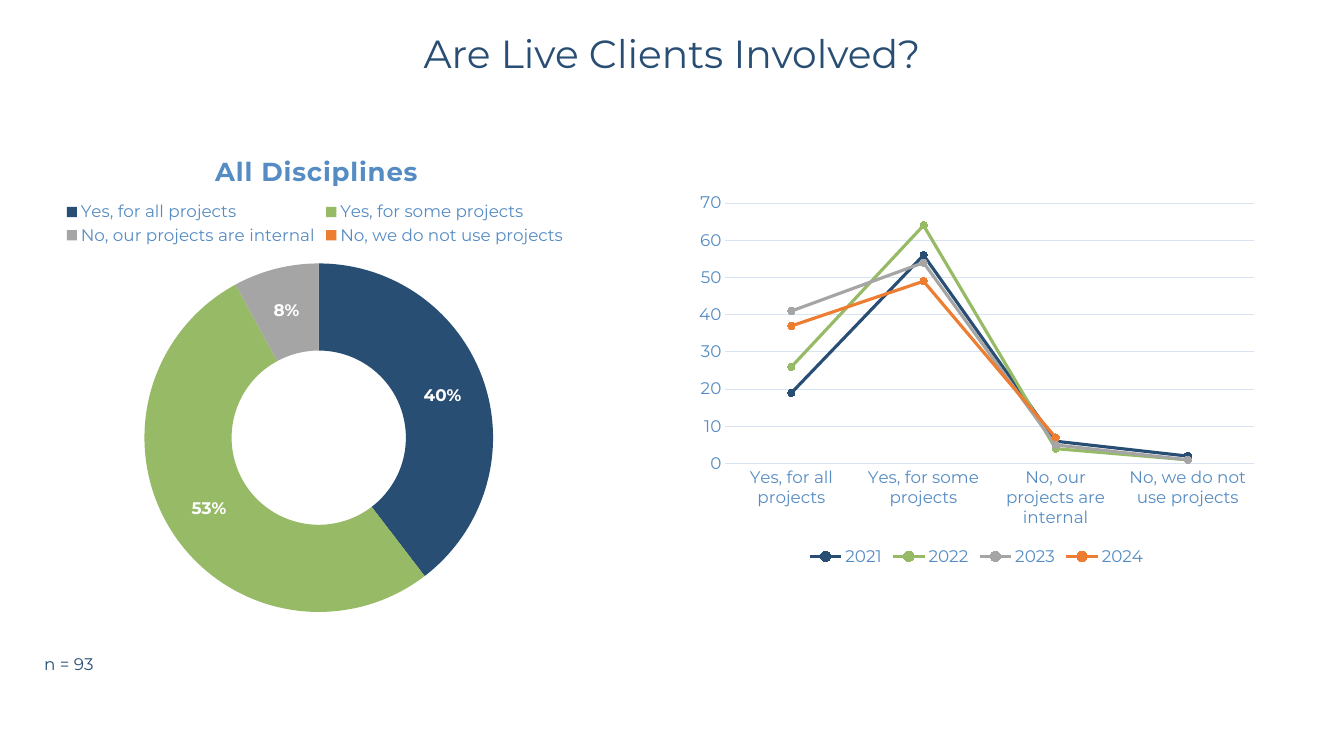
from lxml import etree
from pptx import Presentation
from pptx.chart.data import CategoryChartData
from pptx.dml.color import RGBColor
from pptx.enum.chart import XL_CHART_TYPE, XL_LEGEND_POSITION, XL_MARKER_STYLE, XL_TICK_MARK
from pptx.enum.text import MSO_ANCHOR, MSO_AUTO_SIZE, PP_ALIGN
from pptx.oxml.ns import qn
from pptx.util import Inches, Pt

DOUGHNUT, LINE = XL_CHART_TYPE.DOUGHNUT, XL_CHART_TYPE.LINE_MARKERS
TOP, BOTTOM = XL_LEGEND_POSITION.TOP, XL_LEGEND_POSITION.BOTTOM
CIRCLE, NO_TICK = XL_MARKER_STYLE.CIRCLE, XL_TICK_MARK.NONE
CENTER, MIDDLE, NO_FIT = PP_ALIGN.CENTER, MSO_ANCHOR.MIDDLE, MSO_AUTO_SIZE.NONE

COLORS = {"navy": "294E73", "green": "96BA65", "gray": "A5A5A5", "orange": "ED7D31",
          "blue": "558CC3", "grid": "D8E4F1", "white": "FFFFFF"}
SEQUENCE = ["navy", "green", "gray", "orange"]
ANSWERS = ["Yes, for all projects", "Yes, for some projects",
           "No, our projects are internal", "No, we do not use projects"]
SHARES = {"Series 1": [40, 53, 8, None]}
YEARS = {"2021": [19, 56, 6, 2], "2022": [26, 64, 4, 1],
         "2023": [41, 54, 5, 1], "2024": [37, 49, 7, None]}


def rgb(name):
    return RGBColor.from_string(COLORS[name])


def apply(target, **values):
    for name, value in values.items():
        setattr(target, name, value)


def place_part(parent, index, **shares):
    layout = parent.find(qn("c:layout"))
    if layout is None:
        layout = etree.Element(qn("c:layout"))
        parent.insert(index, layout)
    manual = etree.SubElement(layout, qn("c:manualLayout"))
    settings = {"xMode": "edge", "yMode": "edge", **shares}
    if parent.tag == qn("c:plotArea"):
        settings = {"layoutTarget": "inner", **settings}
    for name, value in settings.items():
        etree.SubElement(manual, qn(f"c:{name}")).set("val", str(value))


class Deck:
    """Builds styled slides on a grid of 100 columns by 100 rows."""

    def __init__(self):
        self.font = "Montserrat"
        self.prs = Presentation()
        self.prs.slide_width, self.prs.slide_height = Inches(13.33), Inches(7.5)
        self.slide = self.prs.slides.add_slide(self.prs.slide_layouts[5])

    def box(self, left, top, width, height):
        column, row = self.prs.slide_width / 100, self.prs.slide_height / 100
        return [round(n) for n in (left * column, top * row, width * column, height * row)]

    def style(self, font, size, color, bold=False):
        apply(font, name=self.font, size=Pt(size), bold=bold)
        font.color.rgb = rgb(color)

    def line(self, line, color, width):
        line.color.rgb = rgb(color)
        line.width = Pt(width)

    def title(self, words, *grid):
        heading = self.slide.shapes.title
        apply(heading, **dict(zip(("left", "top", "width", "height"), self.box(*grid))))
        frame = heading.text_frame
        frame.text = words
        apply(frame, word_wrap=True, auto_size=NO_FIT, vertical_anchor=MIDDLE)
        frame.paragraphs[0].alignment = CENTER
        self.style(frame.paragraphs[0].runs[0].font, 28, "navy")

    def note(self, words, *grid):
        frame = self.slide.shapes.add_textbox(*self.box(*grid)).text_frame
        frame.text = words
        frame.word_wrap = True
        self.style(frame.paragraphs[0].runs[0].font, 12, "navy")

    def chart(self, kind, rows, legend_position, *grid):
        data = CategoryChartData()
        data.categories = ANSWERS
        for name, values in rows.items():
            data.add_series(name, values)
        chart = self.slide.shapes.add_chart(kind, *self.box(*grid), data).chart
        apply(chart, has_title=False, has_legend=True)
        self.style(chart.font, 10, "navy")
        apply(chart.legend, position=legend_position, include_in_layout=False)
        self.style(chart.legend.font, 12, "blue")
        return chart

    def doughnut(self, heading, rows, *grid):
        chart = self.chart(DOUGHNUT, rows, TOP, *grid)
        chart.has_title = True
        frame = chart.chart_title.text_frame
        frame.text = heading
        run = frame.paragraphs[0].runs[0]
        self.style(run.font, 18.6, "blue", bold=True)
        run.font._element.set("spc", "50")
        plot = chart.plots[0]
        apply(plot, vary_by_categories=True, has_data_labels=True)
        apply(plot.data_labels, show_value=True, show_percentage=False,
              number_format='0"%"', number_format_is_linked=False)
        self.style(plot.data_labels.font, 12, "white", bold=True)
        for index, color in enumerate(SEQUENCE):
            fill = plot.series[0].points[index].format.fill
            fill.solid()
            fill.fore_color.rgb = rgb(color)
        place_part(chart.chart_title._element, 1, x=0.36, y=0.04)
        place_part(chart.legend._element, 1, x=0.16, y=0.14, w=0.68, h=0.1)
        place_part(chart._chartSpace.chart.plotArea, 0, x=0.27, y=0.27, w=0.47, h=0.7)

    def trend(self, rows, *grid):
        chart = self.chart(LINE, rows, BOTTOM, *grid)
        chart.plots[0].vary_by_categories = False
        for axis in (chart.category_axis, chart.value_axis):
            apply(axis, major_tick_mark=NO_TICK, minor_tick_mark=NO_TICK)
            self.style(axis.tick_labels.font, 12, "blue")
        self.line(chart.category_axis.format.line, "grid", 0.75)
        scale = chart.value_axis
        apply(scale, minimum_scale=0, maximum_scale=70, major_unit=10, has_major_gridlines=True)
        scale.format.line.fill.background()
        self.line(scale.major_gridlines.format.line, "grid", 0.75)
        for year, color in zip(chart.plots[0].series, SEQUENCE):
            year.smooth = False
            self.line(year.format.line, color, 2.25)
            apply(year.marker, style=CIRCLE, size=5)
            year.marker.format.fill.solid()
            year.marker.format.fill.fore_color.rgb = rgb(color)
            self.line(year.marker.format.line, color, 0.75)


def main():
    deck = Deck()
    deck.title("Are Live Clients Involved?", 16.5, 3.2, 67, 7.6)
    deck.note("n = 93", 2.55, 85.87, 6, 4)
    deck.doughnut("All Disciplines", SHARES, -4.35, 17.07, 55.59, 65.87)
    deck.trend(YEARS, 51.16, 24.53, 42.99, 50.93)
    deck.prs.save("out.pptx")


if __name__ == "__main__":
    main()
